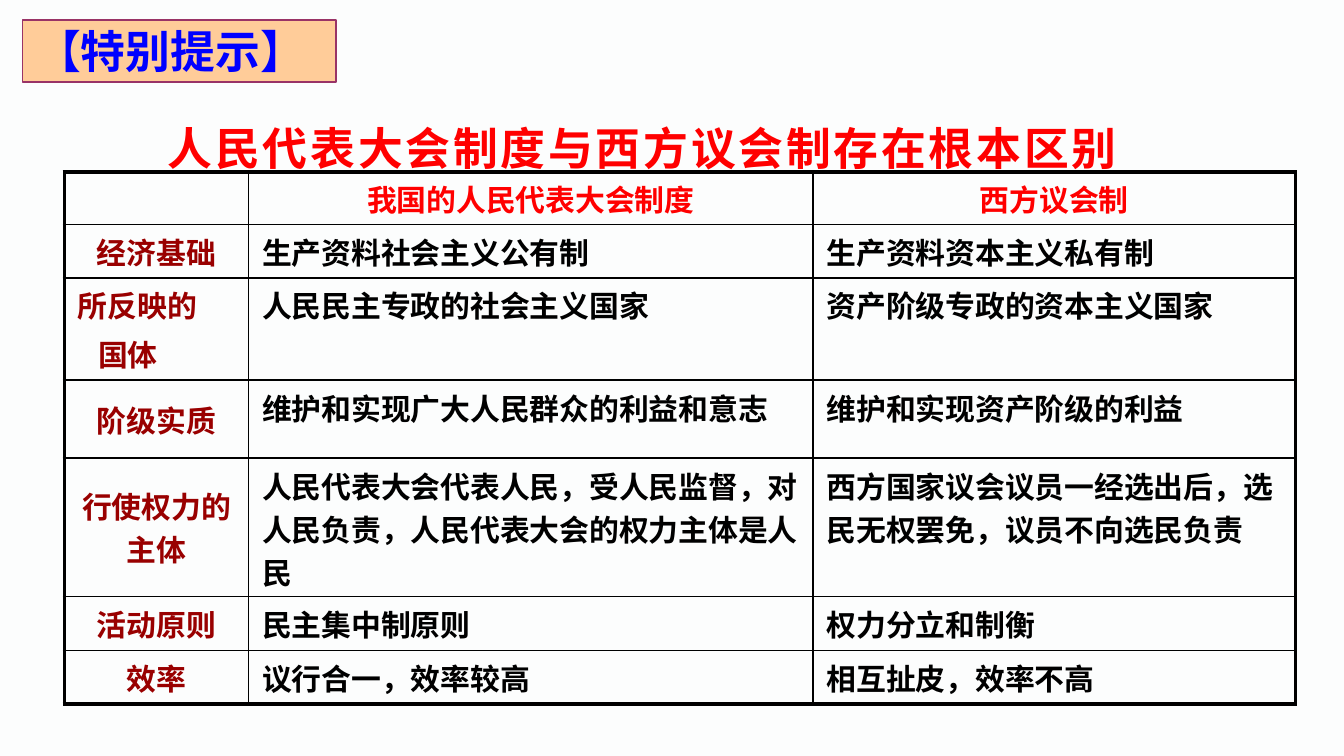
from pptx import Presentation
from pptx.dml.color import RGBColor
from pptx.enum.shapes import MSO_SHAPE
from pptx.enum.text import MSO_ANCHOR, PP_ALIGN
from pptx.oxml.ns import qn
from pptx.util import Inches, Pt
from lxml.etree import SubElement

BLACK, RED, BLUE, BROWN = "000000", "FF0000", "0000FF", "990000"
WIDE = 10
COLS = [1.37, 4.2, 3.59]
HIGH = [0.39, 0.4, 0.76, 0.58, 1.03, 0.4, 0.4]

# Row label, people's congress system, western parliament
ROWS = [
    ("", "我国的人民代表大会制度", "西方议会制"),
    ("经济基础", "生产资料社会主义公有制", "生产资料资本主义私有制"),
    ("所反映的\n国体", "人民民主专政的社会主义国家", "资产阶级专政的资本主义国家"),
    ("阶级实质", "维护和实现广大人民群众的利益和意志", "维护和实现资产阶级的利益"),
    ("行使权力的 主体",
     "人民代表大会代表人民，受人民监督，对人民负责，人民代表大会的权力主体是人民",
     "西方国家议会议员一经选出后，选民无权罢免，议员不向选民负责"),
    ("活动原则", "民主集中制原则", "权力分立和制衡"),
    ("效率", "议行合一，效率较高", "相互扯皮，效率不高"),
]
STATE = 2   # its label is left-aligned, with an indented second paragraph


def color(code):
    return RGBColor.from_string(code)


class Deck:
    font = "DejaVu Sans"

    def __init__(self, wide, high):
        self.file = Presentation()
        self.file.slide_width = Inches(wide)
        self.file.slide_height = Inches(high)
        self.slide = self.file.slides.add_slide(self.file.slide_layouts[6])
        fill = self.slide.background.fill
        fill.solid()
        fill.fore_color.rgb = color("FCFDFD")

    def run(self, para, text, size, code, font=None):
        run = para.add_run()
        run.text = text
        run.font.name = font or self.font
        run.font.size = Pt(size)
        run.font.bold = True
        run.font.color.rgb = color(code)
        return run

    def title(self, box, text):
        frame = self.slide.shapes.add_textbox(*map(Inches, box)).text_frame
        frame.word_wrap = True
        para = frame.paragraphs[0]
        para.line_spacing = 1.3
        para.space_after = Pt(10)
        run = self.run(para, text, 24, RED, "Arial")
        run.font._element.set("spc", "150")

    def label(self, box, text):
        shape = self.slide.shapes.add_shape(MSO_SHAPE.RECTANGLE, *map(Inches, box))
        shape.shadow.inherit = False
        shape.fill.solid()
        shape.fill.fore_color.rgb = color("FFCC99")
        shape.line.color.rgb = color("993366")
        shape.line.width = Pt(0.75)
        shape.text_frame.vertical_anchor = MSO_ANCHOR.MIDDLE
        para = shape.text_frame.paragraphs[0]
        para.alignment = PP_ALIGN.LEFT
        self.run(para, text, 24, BLUE)

    def edge(self, cell, side, width):
        line = SubElement(cell._tc.get_or_add_tcPr(), qn("a:ln" + side), w=str(Pt(width)))
        fill = SubElement(line, qn("a:solidFill"))
        SubElement(fill, qn("a:srgbClr"), val=BLACK)

    def para(self, para, text, code, align):
        para.alignment = align
        para.space_before = Pt(3.2)
        self.run(para, text, 16, code)

    def cell(self, cell, row, col):
        # Thick outer frame, thin inner lines
        outer = {"L": col == 0, "R": col == len(COLS) - 1,
                 "T": row == 0, "B": row == len(ROWS) - 1}
        for side, thick in outer.items():
            self.edge(cell, side, 2.25 if thick else 1)
        cell.fill.background()
        cell.margin_top = cell.margin_bottom = Inches(0.04)
        if col == 0:
            cell.vertical_anchor = MSO_ANCHOR.MIDDLE

        # Text
        text = ROWS[row][col]
        if not text:
            return
        code = RED if row == 0 else BROWN if col == 0 else BLACK
        mid = row == 0 or (col == 0 and row != STATE)
        align = PP_ALIGN.CENTER if mid else PP_ALIGN.LEFT
        first, *rest = text.split("\n")
        self.para(cell.text_frame.paragraphs[0], first, code, align)
        for part in rest:
            para = cell.text_frame.add_paragraph()
            self.para(para, part, code, align)
            para._p.get_or_add_pPr().set("marL", str(Inches(0.15)))

    def table(self, box):
        grid = self.slide.shapes.add_table(len(ROWS), len(COLS), *map(Inches, box)).table
        grid.first_row = grid.horz_banding = False
        for col, wide in enumerate(COLS):
            grid.columns[col].width = Inches(wide)
        for row, high in enumerate(HIGH):
            grid.rows[row].height = Inches(high)
            for col in range(len(COLS)):
                self.cell(grid.cell(row, col), row, col)


def main():
    deck = Deck(WIDE, WIDE * 9 / 16)
    # Heading
    deck.title((1.15, 0.73, 7.56, 0.57), "人民代表大会制度与西方议会制存在根本区别")
    # Comparison
    deck.table((0.48, 1.28, sum(COLS), sum(HIGH)))
    # Corner tag
    deck.label((0.17, 0.15, 2.33, 0.46), "【特别提示】")
    deck.file.save("out.pptx")


if __name__ == "__main__":
    main()
